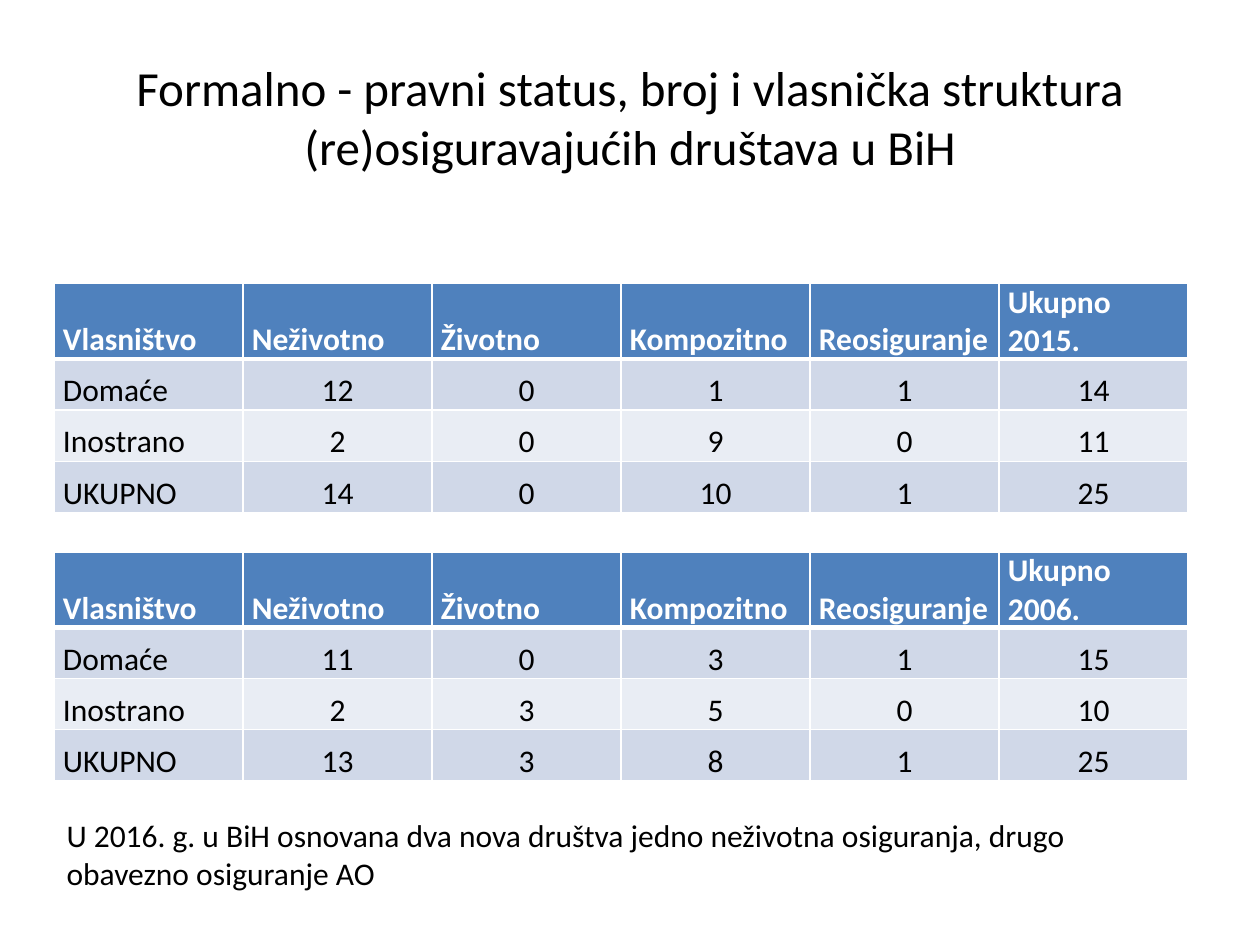
from lxml import etree
from pptx import Presentation
from pptx.dml.color import RGBColor
from pptx.enum.text import MSO_ANCHOR, PP_ALIGN
from pptx.oxml.ns import qn
from pptx.util import Inches, Pt

LEFT, CENTER = PP_ALIGN.LEFT, PP_ALIGN.CENTER
TOP, MIDDLE, BOTTOM = MSO_ANCHOR.TOP, MSO_ANCHOR.MIDDLE, MSO_ANCHOR.BOTTOM

TITLE = "Formalno - pravni status, broj i vlasnička struktura (re)osiguravajućih društava u BiH"
NOTE = ("U 2016. g. u BiH osnovana dva nova društva jedno neživotna osiguranja, "
        "drugo obavezno osiguranje AO")
KINDS = ["Neživotno", "Životno", "Kompozitno", "Reosiguranje"]
OWNERSHIP = {
    "2015.": [("Domaće", 12, 0, 1, 1, 14),
              ("Inostrano", 2, 0, 9, 0, 11),
              ("UKUPNO", 14, 0, 10, 1, 25)],
    "2006.": [("Domaće", 11, 0, 3, 1, 15),
              ("Inostrano", 2, 3, 5, 0, 10),
              ("UKUPNO", 13, 3, 8, 1, 25)],
}

THEME = {
    "font": "Calibri", "title_size": 28, "body_size": 18,
    "text": "000000", "header_text": "FFFFFF", "border": "FFFFFF",
    "header": "4F81BD", "bands": ("D0D8E8", "E9EDF4"),
    "thin": 1, "thick": 3,
}

SLIDE_WIDTH, SLIDE_HEIGHT = Inches(10), Inches(7.5)
MARGIN = Inches(0.43)
TABLE_TOP, TABLE_PITCH = Inches(2.25), Inches(2.13)
TABLE_WIDTH = int(SLIDE_WIDTH * 0.9)
ROW_HEIGHT = Pt(29.2)
CELL_FORMAT = {"vertical_anchor": BOTTOM, "margin_top": 0, "margin_bottom": 0,
               "margin_left": Inches(0.07), "margin_right": Inches(0.07)}


def write(text_frame, text, size, color, bold=False, alignment=LEFT):
    paragraph = text_frame.paragraphs[0]
    paragraph.alignment = alignment
    run = paragraph.add_run()
    run.text = text
    font_format = {"name": THEME["font"], "size": Pt(size), "bold": bold}
    for name, value in font_format.items():
        setattr(run.font, name, value)
    run.font.color.rgb = RGBColor.from_string(color)


def add_text(slide, box, text, size, alignment, anchor):
    text_frame = slide.shapes.add_textbox(*box).text_frame
    text_frame.word_wrap = True
    text_frame.vertical_anchor = anchor
    write(text_frame, text, size, THEME["text"], alignment=alignment)


def set_borders(cell, top, bottom):
    """Draw all four sides; must run before the cell's fill is set."""
    properties = cell._tc.get_or_add_tcPr()
    sides = {"L": THEME["thin"], "R": THEME["thin"], "T": top, "B": bottom}
    for side, width in sides.items():
        line = etree.SubElement(properties, qn(f"a:ln{side}"), w=str(Pt(width)))
        fill = etree.SubElement(line, qn("a:solidFill"))
        etree.SubElement(fill, qn("a:srgbClr"), val=THEME["border"])


def add_ownership_table(slide, top, year, body):
    rows = [("Vlasništvo", *KINDS, f"Ukupno {year}"), *body]
    table = slide.shapes.add_table(len(rows), len(rows[0]), MARGIN, top,
                                   TABLE_WIDTH, ROW_HEIGHT * len(rows)).table
    for i, values in enumerate(rows):
        is_header = i == 0
        fill = THEME["header"] if is_header else THEME["bands"][(i - 1) % 2]
        color = THEME["header_text"] if is_header else THEME["text"]
        above = THEME["thick"] if i == 1 else THEME["thin"]
        below = THEME["thick"] if is_header else THEME["thin"]
        for j, value in enumerate(values):
            cell = table.cell(i, j)
            for name, setting in CELL_FORMAT.items():
                setattr(cell, name, setting)
            set_borders(cell, above, below)
            cell.fill.solid()
            cell.fill.fore_color.rgb = RGBColor.from_string(fill)
            write(cell.text_frame, str(value), THEME["body_size"], color, is_header,
                  LEFT if is_header or j == 0 else CENTER)


def main():
    presentation = Presentation()
    presentation.slide_width, presentation.slide_height = SLIDE_WIDTH, SLIDE_HEIGHT
    slide = presentation.slides.add_slide(presentation.slide_layouts[6])
    title_box = (Inches(0.5), Inches(0.3), Inches(9), Inches(1.25))
    note_box = (MARGIN, Inches(6.43), Inches(8.98), Inches(0.71))
    add_text(slide, title_box, TITLE, THEME["title_size"], CENTER, MIDDLE)
    for i, (year, body) in enumerate(OWNERSHIP.items()):
        add_ownership_table(slide, TABLE_TOP + i * TABLE_PITCH, year, body)
    add_text(slide, note_box, NOTE, THEME["body_size"], LEFT, TOP)
    presentation.save("out.pptx")


if __name__ == "__main__":
    main()
